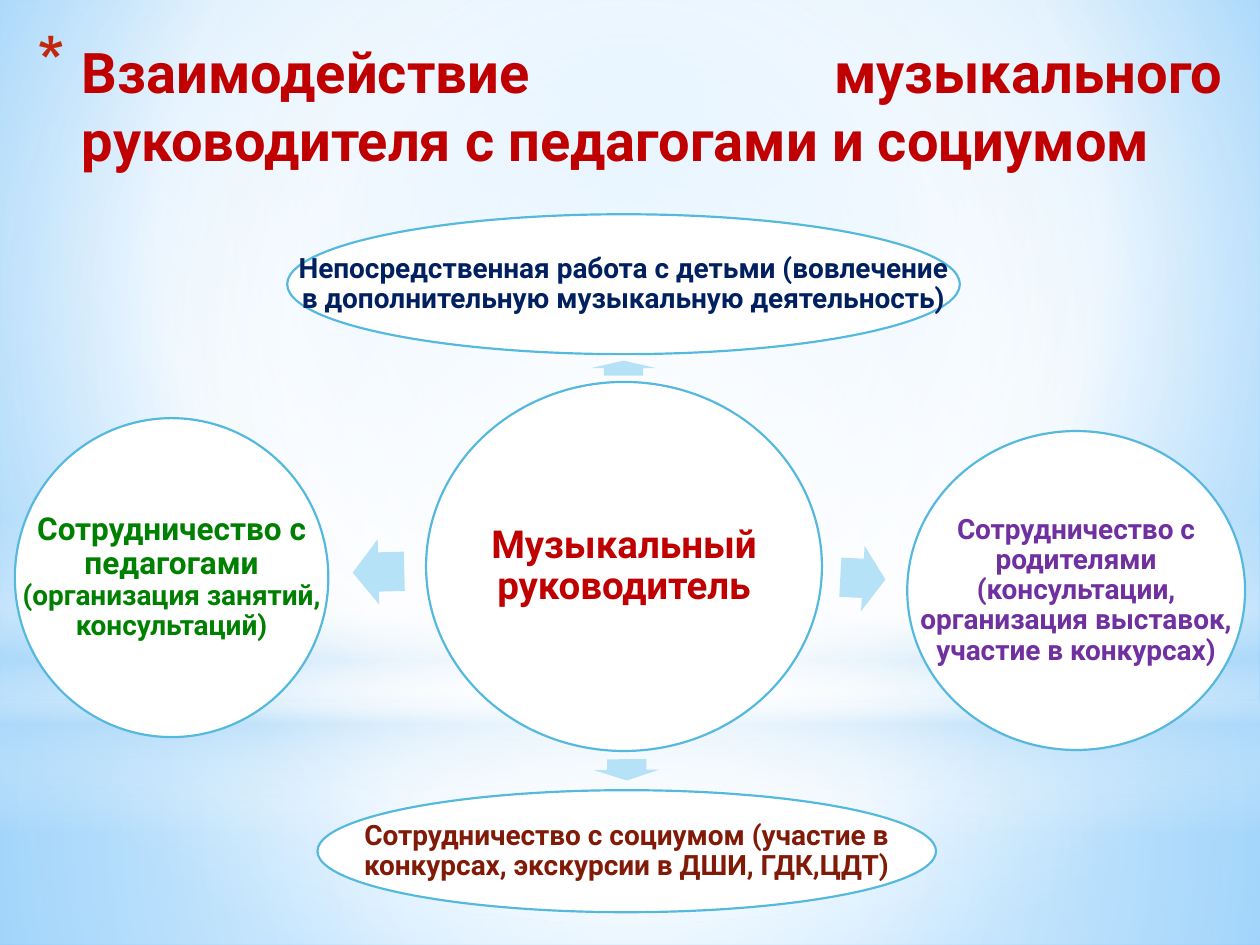
from lxml import etree
from pptx import Presentation
from pptx.dml.color import RGBColor
from pptx.enum.shapes import MSO_SHAPE
from pptx.enum.text import MSO_ANCHOR, PP_ALIGN
from pptx.oxml.ns import qn
from pptx.util import Cm, Pt

OVAL, RECT, ARROW = MSO_SHAPE.OVAL, MSO_SHAPE.RECTANGLE, MSO_SHAPE.RIGHT_ARROW
MIDDLE = MSO_ANCHOR.MIDDLE
CENTER, JUSTIFY = PP_ALIGN.CENTER, PP_ALIGN.JUSTIFY

HUES = {"red": "C00000", "navy": "002060", "violet": "7030A0", "brown": "821A08",
        "green": "008000", "edge": "55B9DD", "arrow": "B6E2F8", "star": "C3260C",
        "white": "FFFFFF", "mist": "B4DCFA", "sky": "9ED5FF", "deep": "5BB9FF"}

TITLE = "Взаимодействие музыкального руководителя с педагогами и социумом"

# Gradient stops: position, colour, opacity (all in percent)
SKY = [(0, "sky", 100), (60, "white", 100), (100, "deep", 100)]
MID = (50, 50, 50, 50)

# Backdrop layers: shape, box in cm, stops, focus (None = top to bottom)
LAYERS = [
    (RECT, (0, 14.17, 25.4, 4.88),
     [(0, "white", 91), (37, "white", 76), (100, "mist", 79)], MID),
    (RECT, (0, 0, 25.4, 14.17),
     [(0, "white", 89), (48, "white", 62), (100, "mist", 79)], MID),
    (RECT, (0, 10.46, 25.4, 6.35),
     [(0, "white", 0), (29, "white", 30), (45, "mist", 40),
      (55, "white", 26), (65, "mist", 60), (100, "white", 0)], None),
    (OVAL, (0, 4.45, 25.4, 14.17), [(0, "white", 100), (56, "white", 0)], MID),
]

# Ovals: box in cm, colour, inset in cm, runs of (text, size)
OVALS = [
    ((8.59, 7.7, 7.98, 7.44), "red", 0.08, [("Музыкальный руководитель", 22)]),
    ((5.79, 4.32, 13.56, 2.82), "navy", 0.05,
     [("Непосредственная работа с детьми (вовлечение в дополнительную "
       "музыкальную деятельность)", 16)]),
    ((18.29, 8.69, 6.81, 6.43), "violet", 0.05,
     [("Сотрудничество с родителями (консультации, организация выставок, "
       "участие в конкурсах)", 16)]),
    ((6.4, 15.93, 12.47, 2.46), "brown", 0.05,
     [("Сотрудничество с социумом (участие в конкурсах, экскурсии в ДШИ, "
       "ГДК,ЦДТ)", 16)]),
    ((0.3, 8.43, 6.32, 6.43), "green", 0.08,
     [("Сотрудничество с педагогами ", 18),
      ("(организация занятий, консультаций)", 16)]),
]

# Arrows: box in cm before turning, degrees
ARROWS = [((12.42, 6.76, 0.3, 1.32), 270), ((16.94, 11, 0.91, 1.32), 3),
          ((12.42, 14.86, 0.43, 1.32), 89.4), ((7.11, 10.87, 1.04, 1.32), 178.6)]


def rgb(name):
    return RGBColor.from_string(HUES[name])


def sub(parent, tag, **attrs):
    node = etree.SubElement(parent, qn(tag))
    for key, val in attrs.items():
        node.set(key, str(val))
    return node


def shade(owner, stops, focus):
    """Swap the solid fill below owner for a gradient."""
    old = owner.find(qn("a:solidFill"))
    grad = etree.Element(qn("a:gradFill"), rotWithShape="1")
    owner.replace(old, grad)
    group = sub(grad, "a:gsLst")
    for pos, hue, alpha in stops:
        color = sub(sub(group, "a:gs", pos=pos * 1000), "a:srgbClr", val=HUES[hue])
        if alpha < 100:
            sub(color, "a:alpha", val=alpha * 1000)
    if focus:
        route = sub(grad, "a:path", path="circle")
        sub(route, "a:fillToRect", **{k: v * 1000 for k, v in zip("ltrb", focus)})
    else:
        sub(grad, "a:lin", ang=90 * 60000, scaled=0)


def form(kind, box, hue, edge=None):
    shape = slide.shapes.add_shape(kind, *map(Cm, box))
    shape.shadow.inherit = False
    shape.fill.solid()
    shape.fill.fore_color.rgb = rgb(hue)
    if edge:
        shape.line.color.rgb = rgb(edge)
        shape.line.width = Pt(1.25)
    else:
        shape.line.fill.background()
    return shape


def label(box, runs, hue, align, **look):
    frame = slide.shapes.add_textbox(*map(Cm, box)).text_frame
    for key, val in {"word_wrap": True, "vertical_anchor": MIDDLE, **look}.items():
        setattr(frame, key, val)
    para = frame.paragraphs[0]
    para.alignment = align
    for text, size in runs:
        run = para.add_run()
        run.text = text
        style = {"name": "Roboto", "size": Pt(size), "bold": True}
        for key, val in style.items():
            setattr(run.font, key, val)
        run.font.color.rgb = rgb(hue)
    return para


prs = Presentation()
prs.slide_width, prs.slide_height = Cm(25.4), Cm(19.05)
slide = prs.slides.add_slide(prs.slide_layouts[6])

# Background and its soft layers
slide.background.fill.solid()
shade(slide.element.find(".//" + qn("p:bgPr")), SKY, (20, 10, 20, 60))
for kind, box, stops, focus in LAYERS:
    shade(form(kind, box, "white").element.spPr, stops, focus)

# Title with a star bullet
title = label((0.51, 0.53, 24.41, 3.18), [(TITLE, 32)], "red", JUSTIFY)
props = title._p.get_or_add_pPr()
props.set("marL", str(Cm(0.89)))
props.set("indent", str(-Cm(0.89)))
sub(sub(props, "a:buClr"), "a:srgbClr", val=HUES["star"])
sub(props, "a:buSzPct", val=128000)
sub(props, "a:buChar", char="*")

# Arrows out of the centre
for box, turn in ARROWS:
    arrow = form(ARROW, box, "arrow")
    arrow.rotation = turn
    arrow.adjustments[0], arrow.adjustments[1] = 0.6, 0.5

# Ovals with their text
for box, hue, gap, runs in OVALS:
    form(OVAL, box, "white", "edge")
    sides = {"margin_" + s: Cm(gap) for s in ("left", "top", "right", "bottom")}
    label(box, runs, hue, CENTER, **sides).line_spacing = 0.9

prs.save("out.pptx")
